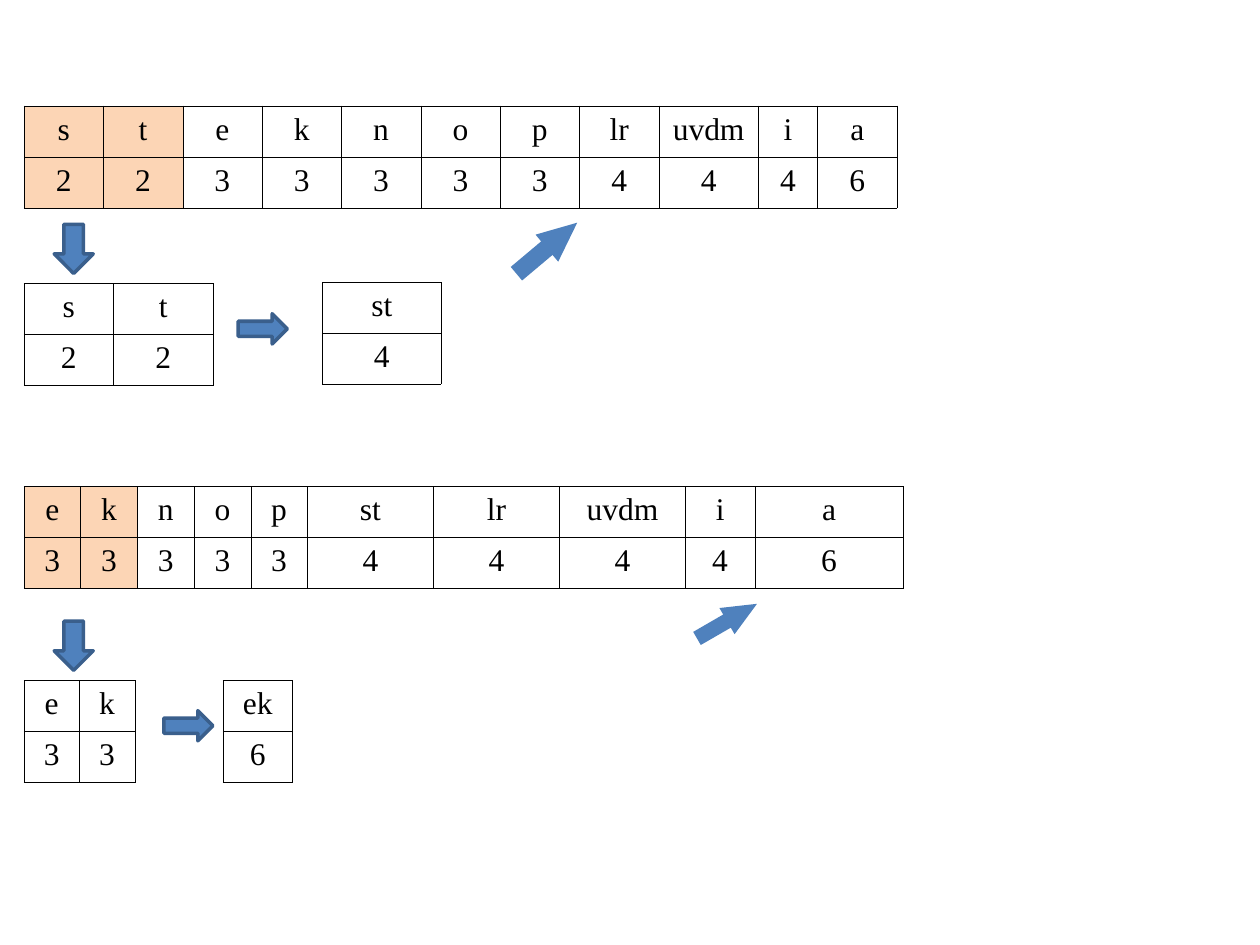
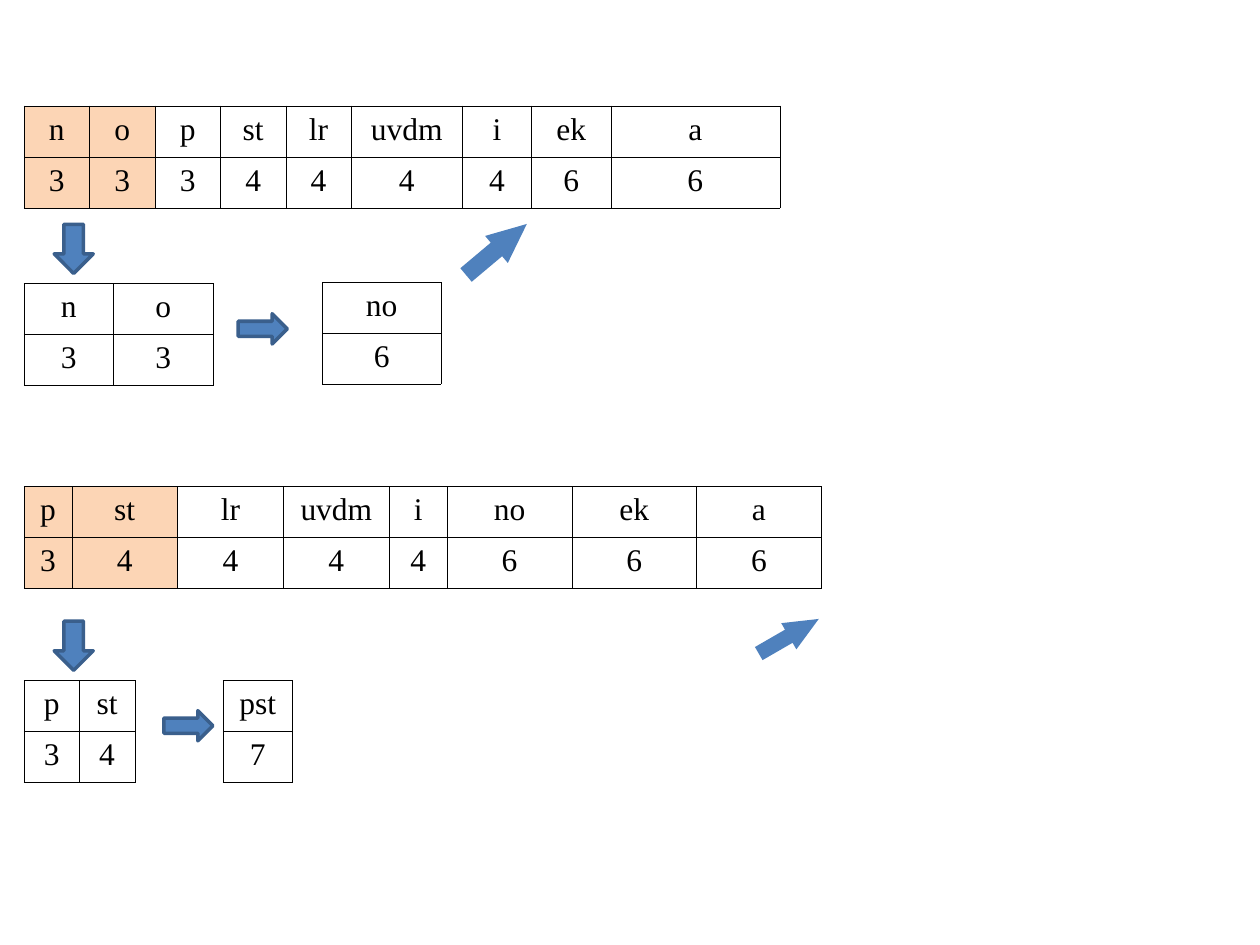
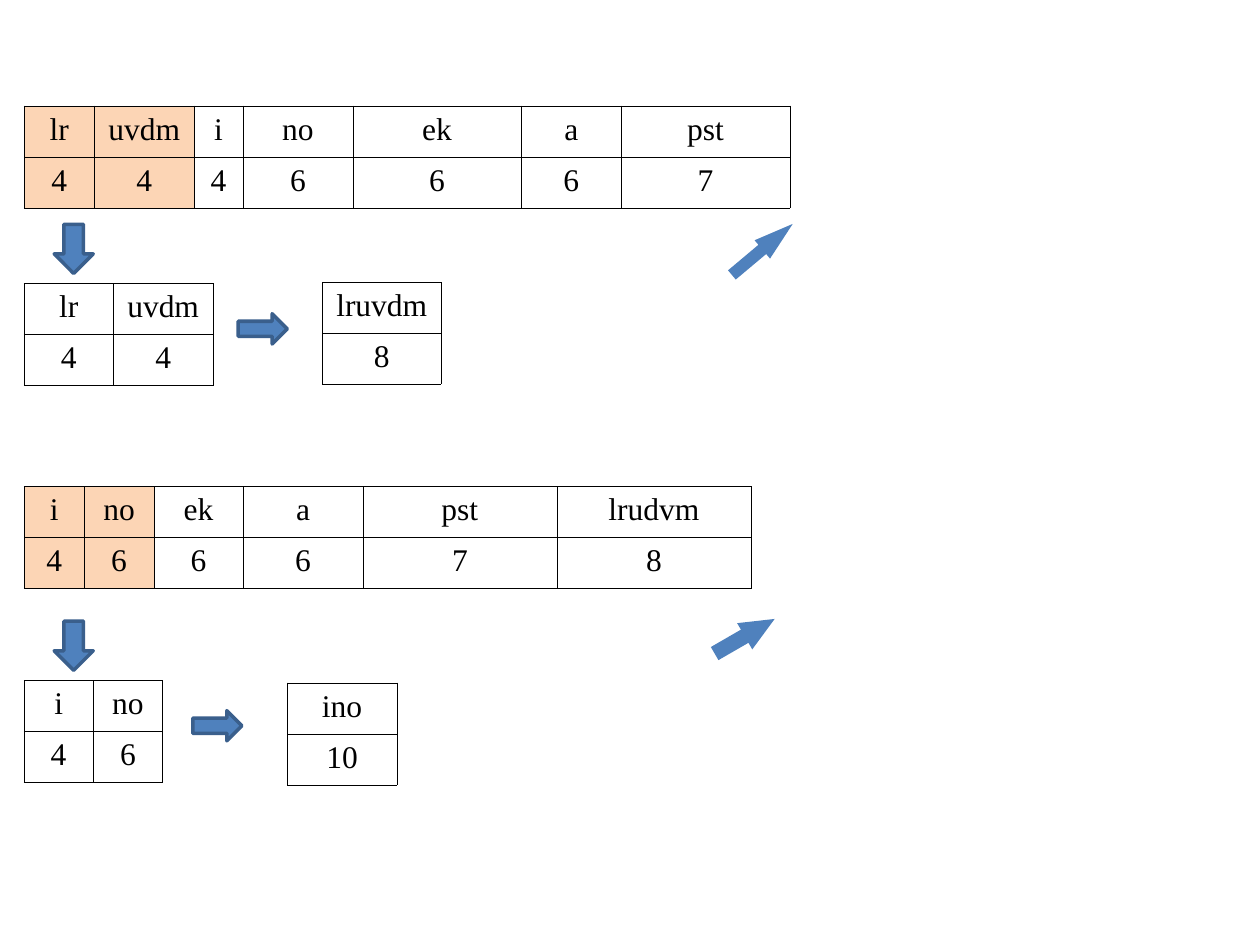
from dataclasses import dataclass, replace

from lxml.etree import SubElement
from pptx import Presentation
from pptx.dml.color import RGBColor
from pptx.enum.shapes import MSO_SHAPE
from pptx.enum.text import PP_ALIGN
from pptx.oxml.ns import qn
from pptx.util import Inches, Pt


@dataclass(frozen=True)
class Theme:
    """Colours, type and line sizes shared by all slides."""
    font: str = "Times New Roman"
    size: float = 18
    ink: str = "000000"
    paper: str = "FFFFFF"
    highlight: str = "FCD5B5"
    arrow: str = "4F81BD"
    outline: str = "3A5F8C"
    border: float = 0.25
    outline_width: float = 2
    left: float = 0.19
    table_height: float = 0.81


@dataclass(frozen=True)
class Lane:
    """Positions of one merge step on the slide."""
    queue_top: float
    down_top: float
    pair_top: float
    pair_widths: tuple
    right_at: tuple
    merged_at: tuple
    merged_width: float
    insert_length: float
    insert_angle: float


@dataclass(frozen=True)
class Step:
    """Queue contents, column widths and insert arrow of one merge step."""
    symbols: str
    counts: tuple
    widths: tuple
    insert_center: tuple
    insert_width: float
    lane: Lane


class HuffmanDeck:
    """Draws merge steps with one style on the current slide."""

    def __init__(self, theme):
        """Open an empty deck."""
        self.theme = theme
        self.deck = Presentation()
        self.deck.slide_width, self.deck.slide_height = Inches(10), Inches(7.5)
        self.page = None

    def add_page(self):
        """Start a blank slide."""
        self.page = self.deck.slides.add_slide(self.deck.slide_layouts[6])

    def add_border(self, cell):
        """Draw a thin line on all four sides of a cell."""
        properties = cell._tc.get_or_add_tcPr()
        for position, side in enumerate(("a:lnL", "a:lnR", "a:lnT", "a:lnB")):
            line = properties.makeelement(qn(side), {"w": str(Pt(self.theme.border))})
            properties.insert(position, line)
            fill = SubElement(line, qn("a:solidFill"))
            SubElement(fill, qn("a:srgbClr"), {"val": self.theme.ink})

    def add_cell(self, cell, text, color):
        """Fill one table cell with centred text."""
        cell.fill.solid()
        cell.fill.fore_color.rgb = RGBColor.from_string(color)
        para = cell.text_frame.paragraphs[0]
        para.alignment = PP_ALIGN.CENTER
        span = para.add_run()
        span.text = str(text)
        formats = {"name": self.theme.font, "size": Pt(self.theme.size), "bold": False}
        for name, value in formats.items():
            setattr(span.font, name, value)
        span.font.color.rgb = RGBColor.from_string(self.theme.ink)
        self.add_border(cell)

    def add_table(self, left, top, widths, symbols, counts, highlighted=0):
        """Draw symbols above their counts, the first few highlighted."""
        height = Inches(self.theme.table_height)
        frame = self.page.shapes.add_table(
            2, len(widths), Inches(left), Inches(top), Inches(sum(widths)), height)
        table = frame.table
        for name in ("first_row", "horz_banding"):
            setattr(table, name, False)
        for column, width in zip(table.columns, widths):
            column.width = Inches(width)
        for row, texts in zip(table.rows, (symbols, counts)):
            row.height = height // 2
            for index, (cell, text) in enumerate(zip(row.cells, texts)):
                color = self.theme.highlight if index < highlighted else self.theme.paper
                self.add_cell(cell, text, color)

    def add_arrow(self, kind, left, top, width, height, outlined=True):
        """Draw a block arrow and return it."""
        arrow = self.page.shapes.add_shape(
            kind, Inches(left), Inches(top), Inches(width), Inches(height))
        arrow.shadow.inherit = False
        arrow.fill.solid()
        arrow.fill.fore_color.rgb = RGBColor.from_string(self.theme.arrow)
        if outlined:
            arrow.line.color.rgb = RGBColor.from_string(self.theme.outline)
            arrow.line.width = Pt(self.theme.outline_width)
        else:
            arrow.line.fill.background()
        return arrow

    def add_insert_arrow(self, center, width, length, angle):
        """Draw a tilted arrow whose head takes half its length."""
        x, y = center
        arrow = self.add_arrow(MSO_SHAPE.UP_ARROW, x - width / 2, y - length / 2,
                               width, length, outlined=False)
        arrow.adjustments[1] = length / 2 / width
        arrow.rotation = angle

    def add_step(self, step):
        """Draw a queue, its two lightest nodes and their merged node."""
        lane, left = step.lane, self.theme.left
        symbols, counts = step.symbols.split(), step.counts
        self.add_table(left, lane.queue_top, step.widths, symbols, counts, highlighted=2)
        self.add_table(left, lane.pair_top, lane.pair_widths, symbols[:2], counts[:2])
        self.add_arrow(MSO_SHAPE.DOWN_ARROW, 0.43, lane.down_top, 0.31, 0.39)
        self.add_table(*lane.merged_at, [lane.merged_width],
                       ["".join(symbols[:2])], [sum(counts[:2])])
        self.add_arrow(MSO_SHAPE.RIGHT_ARROW, *lane.right_at, 0.39, 0.24)
        self.add_insert_arrow(step.insert_center, step.insert_width,
                              lane.insert_length, lane.insert_angle)


UPPER = Lane(0.84, 1.78, 2.25, (0.71, 0.79), (1.89, 2.49), (2.56, 2.24), 0.94, 0.63, 50)
LOWER = Lane(3.86, 4.93, 5.4, (0.44, 0.44), (1.3, 5.64), (1.77, 5.4), 0.55, 0.55, 60)
LOWER_WIDE = replace(LOWER, pair_widths=(0.55, 0.55), right_at=(1.53, 5.64),
                     merged_at=(2.28, 5.42), merged_width=0.87)

PAGES = [
    (Step("s t e k n o p lr uvdm i a", (2, 2, 3, 3, 3, 3, 3, 4, 4, 4, 6),
          (0.63,) * 8 + (0.79, 0.47, 0.63), (4.34, 1.97), 0.28, UPPER),
     Step("e k n o p st lr uvdm i a", (3, 3, 3, 3, 3, 4, 4, 4, 4, 6),
          (0.45,) * 5 + (1, 1, 1, 0.55, 1.18), (5.77, 4.93), 0.24, LOWER)),
    (Step("n o p st lr uvdm i ek a", (3, 3, 3, 4, 4, 4, 4, 6, 6),
          (0.52,) * 5 + (0.88, 0.55, 0.63, 1.34), (3.94, 1.98), 0.28, UPPER),
     Step("p st lr uvdm i no ek a", (3, 4, 4, 4, 4, 6, 6, 6),
          (0.38, 0.84, 0.84, 0.84, 0.46) + (0.99,) * 3, (6.26, 5.05), 0.24, LOWER)),
    (Step("lr uvdm i no ek a pst", (4, 4, 4, 6, 6, 6, 7),
          (0.56, 0.79, 0.39, 0.87, 1.34, 0.79, 1.34), (6.05, 1.98), 0.19, UPPER),
     Step("i no ek a pst lrudvm", (4, 6, 6, 6, 7, 8),
          (0.48, 0.55, 0.71, 0.95, 1.54, 1.54), (5.91, 5.05), 0.24, LOWER_WIDE)),
]


def main():
    """Build all slides and save the deck."""
    huffman = HuffmanDeck(Theme())
    for steps in PAGES:
        huffman.add_page()
        for step in steps:
            huffman.add_step(step)
    huffman.deck.save("out.pptx")


if __name__ == "__main__":
    main()
